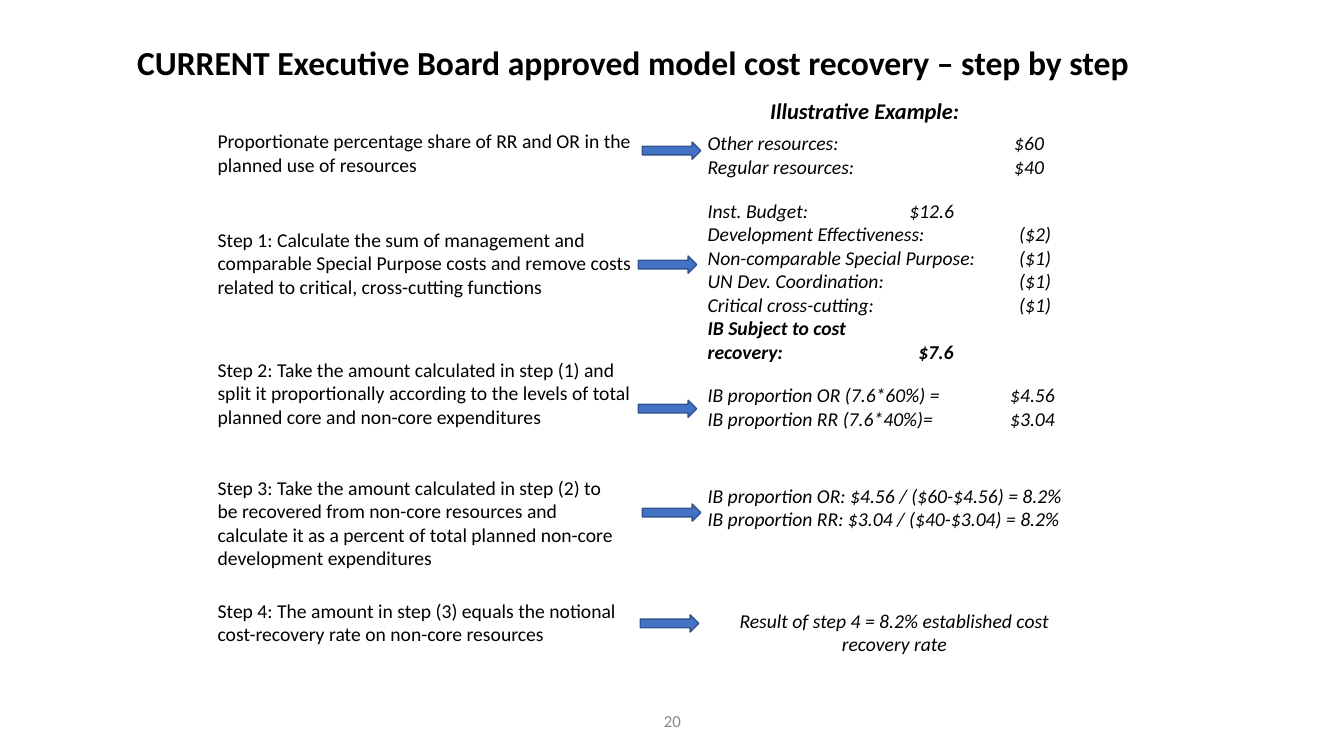
import pptx
import pptx.util
import pptx.dml.color
import pptx.enum.shapes
import pptx.enum.text
import pptx.oxml
import pptx.oxml.ns

Inches = pptx.util.Inches
ALIGN = pptx.enum.text.PP_ALIGN
ANCHOR = pptx.enum.text.MSO_ANCHOR

FONT = "Calibri"
LEFT_X, EXAMPLE_X = 2.06, 6.92
ARROW_W, ARROW_H = 0.58, 0.17

# Each step: (text, top, width, height), (arrow left, top),
# (example lines, top, width, height, alignment).
# An example line is its text, the tab stop of its amount and its weight.
STEPS = [
    (("Proportionate percentage share of RR and OR in the planned use of resources",
      1.23, 4.33, 0.57),
     (6.37, 1.41),
     ([("Other resources:\t$60", 3.04, False),
       ("Regular resources:\t$40", 3.04, False)], 1.25, 3.76, 0.57, ALIGN.LEFT)),
    (("Step 1: Calculate the sum of management and comparable Special Purpose costs "
      "and remove costs related to critical, cross-cutting functions",
      2.21, 4.39, 1.04),
     (6.33, 2.54),
     ([("Inst. Budget:\t$12.6", 2, False),
       ("Development Effectiveness:\t($2)", 3.09, False),
       ("Non-comparable Special Purpose:\t($1)", 3.09, False),
       ("UN Dev. Coordination:\t($1)", 3.09, False),
       ("Critical cross-cutting:\t($1)", 3.09, False),
       ("IB Subject to cost", None, True),
       ("recovery:\t$7.6", 2.09, True)], 1.92, 3.71, 1.75, ALIGN.LEFT)),
    (("Step 2: Take the amount calculated in step (1) and split it proportionally "
      "according to the levels of total planned core and non-core expenditures",
      3.5, 4.33, 0.81),
     (6.33, 3.97),
     ([("IB proportion OR (7.6*60%) =\t$4.56", 3, False),
       ("IB proportion RR (7.6*40%)=\t$3.04", 3, False)], 3.75, 3.72, 0.57, ALIGN.LEFT)),
    (("Step 3: Take the amount calculated in step (2) to be recovered from non-core "
      "resources and calculate it as a percent of total planned non-core "
      "development expenditures", 4.67, 4.19, 1.04),
     (6.37, 5),
     ([("IB proportion OR: $4.56 / ($60-$4.56) = 8.2%", None, False),
       ("IB proportion RR: $3.04 / ($40-$3.04) = 8.2%", None, False)],
      4.75, 4.25, 0.57, ALIGN.LEFT)),
    (("Step 4: The amount in step (3) equals the notional cost-recovery rate on "
      "non-core resources", 5.89, 4.39, 0.57),
     (6.35, 6.1),
     ([("Result of step 4 = 8.2% established cost recovery rate", None, False)],
      5.99, 3.9, 0.57, ALIGN.CENTER)),
]


def rgb(color):
    return pptx.dml.color.RGBColor.from_string(color)


def write(p, text, size=14, color="000000", bold=False, italic=False,
          align=ALIGN.LEFT, tab=None):
    """Add a formatted run to p; tab is the position of a tab stop in inches."""
    p.alignment = align
    if tab is not None:
        tabs = pptx.oxml.parse_xml(
            f'<a:tabLst {pptx.oxml.ns.nsdecls("a")}>'
            f'<a:tab pos="{Inches(tab)}" algn="l"/></a:tabLst>')
        p._p.get_or_add_pPr().append(tabs)
    r = p.add_run()
    r.text = text
    r.font.name = FONT
    r.font.size = pptx.util.Pt(size)
    r.font.bold = bold
    r.font.italic = italic
    r.font.color.rgb = rgb(color)


def add_text_box(s, left, top, width, height, anchor=ANCHOR.TOP):
    sp = s.shapes.add_textbox(*map(Inches, (left, top, width, height)))
    tf = sp.text_frame
    tf.word_wrap = True
    tf.vertical_anchor = anchor
    return tf


def add_title(s, text, left, top, width, height):
    sp = s.shapes.title
    sp.left, sp.top, sp.width, sp.height = map(Inches, (left, top, width, height))
    tf = sp.text_frame
    tf.word_wrap = True
    tf.auto_size = pptx.enum.text.MSO_AUTO_SIZE.NONE
    tf.vertical_anchor = ANCHOR.MIDDLE
    write(tf.paragraphs[0], text, size=24, bold=True)


def add_arrow(s, left, top):
    sp = s.shapes.add_shape(pptx.enum.shapes.MSO_SHAPE.RIGHT_ARROW,
                            *map(Inches, (left, top, ARROW_W, ARROW_H)))
    sp.shadow.inherit = False
    sp.fill.solid()
    sp.fill.fore_color.rgb = rgb("4472C4")
    sp.line.color.rgb = rgb("31538F")
    sp.line.width = pptx.util.Pt(1)


def add_example(s, lines, top, width, height, align):
    tf = add_text_box(s, EXAMPLE_X, top, width, height)
    for i, (text, tab, bold) in enumerate(lines):
        p = tf.add_paragraph() if i else tf.paragraphs[0]
        write(p, text, bold=bold, italic=True, align=align, tab=tab)


def add_step(s, description, arrow, example):
    text, *box = description
    write(add_text_box(s, LEFT_X, *box).paragraphs[0], text)
    add_arrow(s, *arrow)
    add_example(s, *example)


def main():
    prs = pptx.Presentation()
    prs.slide_width, prs.slide_height = Inches(13.33), Inches(7.5)
    s = prs.slides.add_slide(prs.slide_layouts.get_by_name("Title Only"))
    add_title(s, "CURRENT Executive Board approved model cost recovery – step by step",
              1.26, 0.23, 10.24, 0.77)
    heading = add_text_box(s, 7.54, 0.91, 2.1, 0.37)
    write(heading.paragraphs[0], "Illustrative Example:", size=16, bold=True, italic=True)
    for step in STEPS:
        add_step(s, *step)
    number = add_text_box(s, 4.42, 6.95, 4.5, 0.4, anchor=ANCHOR.MIDDLE)
    write(number.paragraphs[0], "20", size=12, color="888888", align=ALIGN.CENTER)
    prs.save("out.pptx")


if __name__ == "__main__":
    main()
